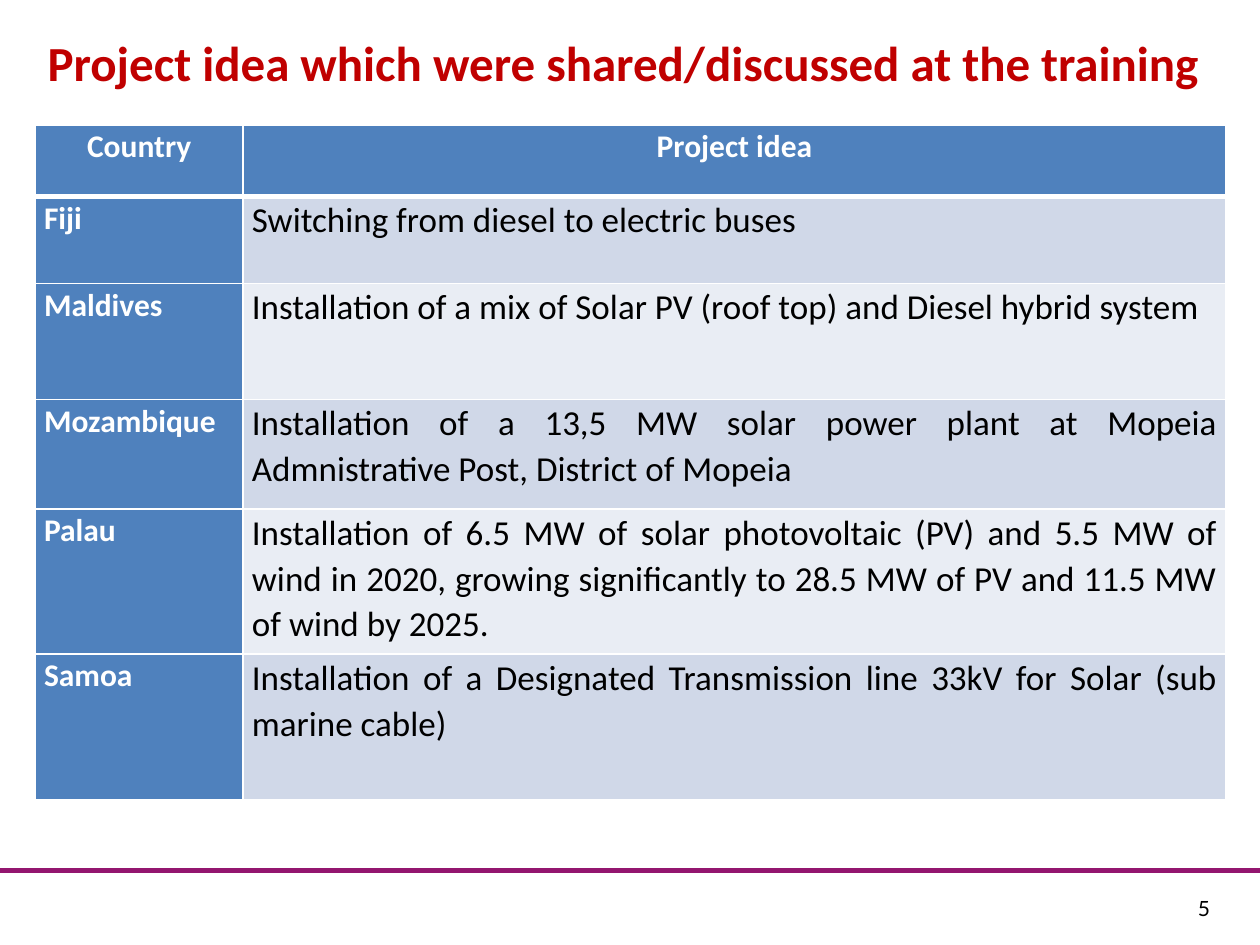
from lxml.etree import SubElement
from pptx import Presentation
from pptx.dml.color import RGBColor
from pptx.enum.shapes import MSO_CONNECTOR
from pptx.enum.text import MSO_AUTO_SIZE, PP_ALIGN
from pptx.oxml.ns import qn
from pptx.util import Inches, Pt

TITLE = "Project idea which were shared/discussed at the training"
PAGE_NUMBER = "5"
HEADINGS = ("Country", "Project idea")
PROJECTS = [
    ("Fiji", "Switching from diesel to electric buses"),
    ("Maldives", "Installation of a mix of Solar PV (roof top) and Diesel hybrid system"),
    ("Mozambique", "Installation of a 13,5 MW solar power plant at Mopeia "
                   "Admnistrative Post, District of Mopeia"),
    ("Palau", "Installation of 6.5 MW of solar photovoltaic (PV) and 5.5 MW of wind in 2020, "
              "growing significantly to 28.5 MW of PV and 11.5 MW of wind by 2025."),
    ("Samoa", "Installation of a Designated Transmission line 33kV for Solar (sub marine cable)"),
]
COLUMN_WIDTHS = (1.65, 7.8)
ROW_HEIGHTS = (0.57, 0.69, 0.92, 0.87, 1.15, 1.16)
BLUE, WHITE = "4F81BD", "FFFFFF"
BANDS = ("D0D8E8", "E9EDF4")
LABEL = {"name": "Calibri", "size": Pt(18), "bold": True, "color": WHITE}
IDEA = {"name": "Calibri", "size": Pt(20), "bold": False, "color": "000000"}
HEADLINE = {"name": "Calibri", "size": Pt(28), "bold": True, "color": "C00000"}
FOOTER = {"name": "Lato", "size": Pt(12), "color": "000000"}
MARGINS = {"margin_left": Inches(0.07), "margin_right": Inches(0.07),
           "margin_top": 0, "margin_bottom": 0}


def paint(color_format, value):
    color_format.rgb = RGBColor.from_string(value)


def write(para, text, style):
    span = para.add_run()
    span.text = text
    for name, value in style.items():
        if name == "color":
            paint(span.font.color, value)
        else:
            setattr(span.font, name, value)


def add_text(page, place, text, style, wrap):
    box = page.shapes.add_textbox(*map(Inches, place))
    box.text_frame.word_wrap = wrap
    box.text_frame.auto_size = MSO_AUTO_SIZE.SHAPE_TO_FIT_TEXT
    write(box.text_frame.paragraphs[0], text, style)


def add_border(cell, side, width):
    line = SubElement(cell._tc.get_or_add_tcPr(), qn(f"a:{side}"), w=str(Pt(width)))
    fill = SubElement(line, qn("a:solidFill"))
    SubElement(fill, qn("a:srgbClr"), val=WHITE)


def fill_cell(cell, text, style, fill, align, borders):
    for name, value in MARGINS.items():
        setattr(cell, name, value)
    for side, width in borders.items():
        add_border(cell, side, width)
    cell.fill.solid()
    paint(cell.fill.fore_color, fill)
    para = cell.text_frame.paragraphs[0]
    para.alignment = align
    para.line_spacing = 1.07
    write(para, text, style)


def add_projects(page):
    rows = [HEADINGS, *PROJECTS]
    frame = page.shapes.add_table(len(rows), len(HEADINGS), Inches(0.28), Inches(0.99),
                                  Inches(sum(COLUMN_WIDTHS)), Inches(sum(ROW_HEIGHTS)))
    table = frame.table
    for column, width in zip(table.columns, COLUMN_WIDTHS):
        column.width = Inches(width)
    for row, height in zip(table.rows, ROW_HEIGHTS):
        row.height = Inches(height)
    for r, texts in enumerate(rows):
        borders = {"lnL": 1, "lnR": 1, "lnT": 3 if r == 1 else 1, "lnB": 3 if r == 0 else 1}
        align = PP_ALIGN.CENTER if r == 0 else PP_ALIGN.JUSTIFY
        for c, text in enumerate(texts):
            is_label = r == 0 or c == 0
            style = LABEL if is_label else IDEA
            fill = BLUE if is_label else BANDS[(r - 1) % 2]
            fill_cell(table.cell(r, c), text, style, fill, align, borders)


def add_rule(page):
    rule = page.shapes.add_connector(MSO_CONNECTOR.STRAIGHT, 0, Inches(6.91),
                                     Inches(10), Inches(6.91))
    rule.line.width = Pt(3)
    paint(rule.line.color, "93166F")
    SubElement(rule._element.spPr, qn("a:effectLst"))


def main():
    deck = Presentation()
    deck.slide_width, deck.slide_height = Inches(10), Inches(7.5)
    page = deck.slides.add_slide(deck.slide_layouts[6])
    add_rule(page)
    add_text(page, (9.41, 7.06, 0.47, 0.3), PAGE_NUMBER, FOOTER, True)
    add_projects(page)
    add_text(page, (0.28, 0.21, 9.44, 0.57), TITLE, HEADLINE, False)
    deck.save("out.pptx")


if __name__ == "__main__":
    main()
